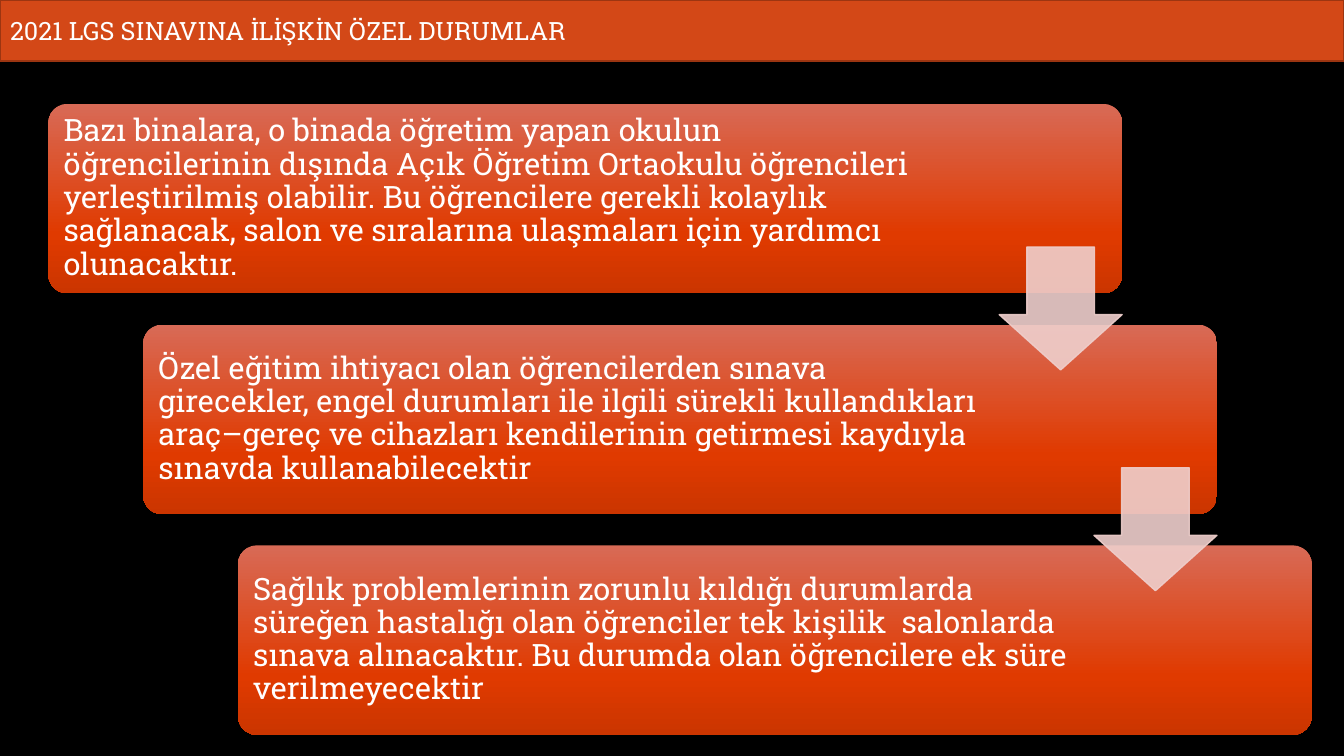
from copy import deepcopy

from pptx import Presentation
from pptx.dml.color import RGBColor
from pptx.enum.shapes import MSO_SHAPE
from pptx.enum.text import MSO_ANCHOR, MSO_AUTO_SIZE, PP_ALIGN
from pptx.oxml.ns import qn
from pptx.oxml.xmlchemy import OxmlElement
from pptx.util import Inches, Pt

ROUND, DOWN = MSO_SHAPE.ROUNDED_RECTANGLE, MSO_SHAPE.DOWN_ARROW
MIDDLE, LEFT, FIXED = MSO_ANCHOR.MIDDLE, PP_ALIGN.LEFT, MSO_AUTO_SIZE.NONE

TITLE = "2021 LGS SINAVINA İLİŞKİN ÖZEL DURUMLAR"
STEPS = [
    ("Bazı binalara, o binada öğretim yapan okulun öğrencilerinin dışında "
     "Açık Öğretim Ortaokulu öğrencileri yerleştirilmiş olabilir. Bu "
     "öğrencilere gerekli kolaylık sağlanacak, salon ve sıralarına "
     "ulaşmaları için yardımcı olunacaktır.", 8.62),
    ("Özel eğitim ihtiyacı olan öğrencilerden sınava girecekler, engel "
     "durumları ile ilgili sürekli kullandıkları araç–gereç ve cihazları "
     "kendilerinin getirmesi kaydıyla sınavda kullanabilecektir", 8.38),
    ("Sağlık problemlerinin zorunlu kıldığı durumlarda süreğen hastalığı "
     "olan öğrenciler tek kişilik  salonlarda sınava alınacaktır. Bu durumda "
     "olan öğrencilere ek süre verilmeyecektir", 8.38),
]
STOPS = [(0, "D86A56"), (0.69, "E03A00"), (1, "CB3500")]
FONT, WHITE, PINK = "Roboto Slab", "FFFFFF", "EFCFCC"
X, Y, WIDE, HIGH = 0.48, 1.03, 10.65, 1.88
DX, DY, INSET, ARROW = 0.94, 2.19, 0.06, 1.22


def color(value):
    return RGBColor.from_string(value)


def write(shape, text, size, space, inset):
    frame = shape.text_frame
    look = dict(word_wrap=True, auto_size=FIXED, vertical_anchor=MIDDLE)
    for side in ("left", "right", "top", "bottom"):
        look["margin_" + side] = Inches(inset)
    for name, value in look.items():
        setattr(frame, name, value)
    frame.text = text
    para = frame.paragraphs[0]
    para.alignment, para.line_spacing = LEFT, space
    for name, value in dict(name=FONT, size=Pt(size)).items():
        setattr(para.font, name, value)
    para.font.color.rgb = color(WHITE)


def paint(shape, fill, line, width):
    shape.fill.solid()
    shape.fill.fore_color.rgb = color(fill)
    shape.line.color.rgb = color(line)
    shape.line.width = Pt(width)


def blend(shape):
    shape.fill.gradient()
    shape.fill.gradient_angle = 270
    stops = shape._element.spPr.find(qn("a:gradFill")).find(qn("a:gsLst"))
    stops.append(deepcopy(stops[-1]))
    for stop, (place, tone) in zip(shape.fill.gradient_stops, STOPS):
        stop.position = place
        stop.color.rgb = color(tone)


def fade(shape, share):
    for tone in shape._element.spPr.iter(qn("a:srgbClr")):
        alpha = OxmlElement("a:alpha")
        alpha.set("val", str(share * 1000))
        tone.append(alpha)


def draw(slide, kind, place, shape_adj):
    shape = slide.shapes.add_shape(kind, *map(Inches, place))
    shape.shadow.inherit = False
    for index, value in enumerate(shape_adj):
        shape.adjustments[index] = value
    return shape


def main():
    deck = Presentation()
    deck.slide_width, deck.slide_height = Inches(13.33), Inches(7.5)
    slide = deck.slides.add_slide(deck.slide_layouts[5])
    slide.background.fill.solid()
    slide.background.fill.fore_color.rgb = color("000000")

    title = slide.shapes.title
    place = dict(left=0, top=0, width=13.33, height=0.61)
    for name, value in place.items():
        setattr(title, name, Inches(value))
    paint(title, "D34817", "9C3511", 1.5)
    write(title, TITLE, 18, 1.0, 0.1)

    for row, (text, width) in enumerate(STEPS):
        left, top = X + row * DX, Y + row * DY
        box = draw(slide, ROUND, (left, top, WIDE, HIGH), [0.1])
        blend(box)
        box.line.fill.background()
        area = (left + INSET, top + INSET, width, HIGH - 2 * INSET)
        label = slide.shapes.add_textbox(*map(Inches, area))
        write(label, text, 22, 0.9, 0.09)

    for row in range(len(STEPS) - 1):
        left = X + WIDE - ARROW + row * DX
        place = (left, 2.45 + row * DY, ARROW, ARROW)
        arrow = draw(slide, DOWN, place, [0.55, 0.45])
        arrow.adjustments[0], arrow.adjustments[1] = 0.55, 0.45
        paint(arrow, PINK, PINK, 1)
        fade(arrow, 90)

    deck.save("out.pptx")


if __name__ == "__main__":
    main()
